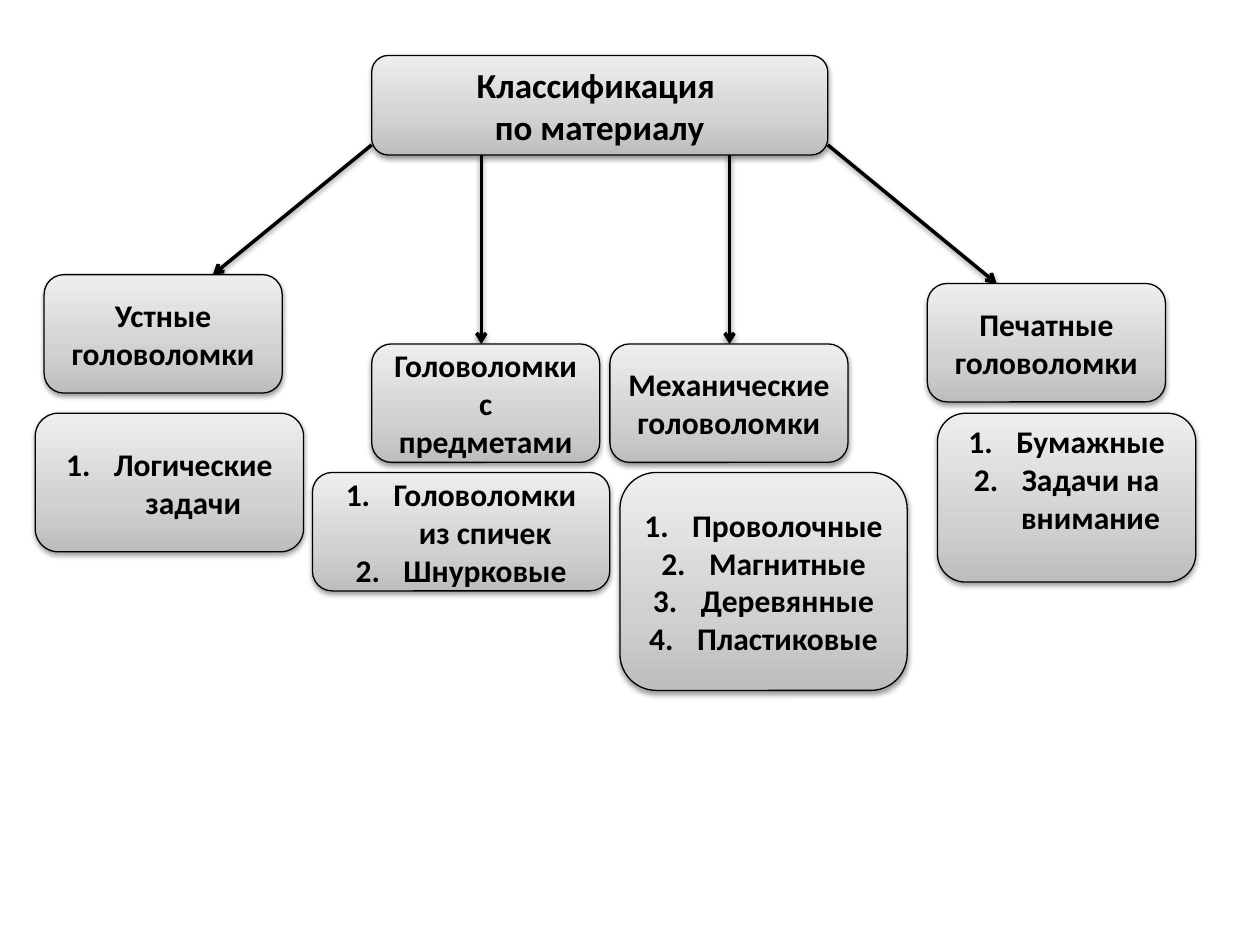
from collections import namedtuple
from lxml.etree import SubElement
from pptx import Presentation
from pptx.dml.color import RGBColor
from pptx.enum.shapes import MSO_CONNECTOR, MSO_SHAPE
from pptx.enum.text import MSO_ANCHOR, PP_ALIGN
from pptx.oxml.ns import qn
from pptx.util import Inches, Pt

COLORS = {"ink": "000000", "low": "BDBDBD", "mid": "D1D1D1", "high": "EEEEEE"}
FADE = [(0, "low"), (35, "mid"), (100, "high")]
FONT = "Calibri"

Box = namedtuple("Box", "left top width height")
Branch = namedtuple("Branch", "start tip head title list items pad")

ROOT = Box(2.95, 0.44, 3.62, 0.79)
TITLE = ["Классификация ", "по материалу"]
BRANCHES = [
    Branch((0, 0.71), 1.34, Box(0.35, 2.18, 1.89, 0.94), "Устные головоломки",
           Box(-0.07, 1.1, 2.13, 1.1), ["Логические задачи"], 0.05),
    Branch((0.87, 0.79), 0.87, Box(2.95, 2.73, 1.81, 0.94), "Головоломки с предметами",
           Box(-0.47, 1.02, 2.36, 0.94), ["Головоломки из спичек", "Шнурковые"], 0.05),
    Branch((2.84, 0.79), 0.95, Box(4.84, 2.73, 1.89, 0.94), "Механические головоломки",
           Box(0.08, 1.02, 2.28, 1.73),
           ["Проволочные", "Магнитные", "Деревянные", "Пластиковые"], 0.05),
    Branch((3.62, 0.71), 0.55, Box(7.36, 2.25, 1.89, 0.94), "Печатные головоломки",
           Box(0.08, 1.03, 2.05, 1.34), ["Бумажные", "Задачи на внимание"], 0.35),
]


def paint(parent, name, alpha=None):
    color = SubElement(parent, qn("a:srgbClr"), val=COLORS[name])
    if alpha:
        SubElement(color, qn("a:alpha"), val=str(alpha * 1000))


def stroke(shape, width):
    shape.line.color.rgb = RGBColor.from_string(COLORS["ink"])
    shape.line.width = Pt(width)


def shade(shape):
    props = shape._element.spPr
    effects = props.find(qn("a:effectLst"))
    if effects is None:
        effects = SubElement(props, qn("a:effectLst"))
    glow = SubElement(effects, qn("a:outerShdw"), blurRad=str(Pt(3.1)),
                      dist=str(Pt(1.6)), dir="5400000", rotWithShape="0")
    paint(glow, "ink", 38)


def fade(shape):
    shape.fill.gradient()
    shape.fill.gradient_angle = 90
    stops = shape._element.spPr.find(qn("a:gradFill")).find(qn("a:gsLst"))
    for stop in list(stops):
        stops.remove(stop)
    for place, name in FADE:
        paint(SubElement(stops, qn("a:gs"), pos=str(place * 1000)), name)


def number(para):
    props = para._p.get_or_add_pPr()
    props.set("marL", str(Inches(0.38)))
    props.set("indent", str(Inches(-0.38)))
    SubElement(props, qn("a:buFont"), typeface="+mj-lt")
    SubElement(props, qn("a:buAutoNum"), type="arabicPeriod")


def add_card(slide, box, lines, size=18, listed=False, pad=0.05):
    card = slide.shapes.add_shape(MSO_SHAPE.ROUNDED_RECTANGLE, *map(Inches, box))
    card.shadow.inherit = False
    fade(card)
    stroke(card, 0.75)
    shade(card)
    frame = card.text_frame
    frame.word_wrap = True
    frame.vertical_anchor = MSO_ANCHOR.MIDDLE
    frame.margin_bottom = Inches(pad)
    for index, line in enumerate(lines):
        para = frame.add_paragraph() if index else frame.paragraphs[0]
        para.alignment = PP_ALIGN.CENTER
        if listed:
            number(para)
        run = para.add_run()
        run.text = line
        run.font.name = FONT
        run.font.size = Pt(size)
        run.font.bold = True
        run.font.color.rgb = RGBColor.from_string(COLORS["ink"])


def add_arrow(slide, start, end):
    arrow = slide.shapes.add_connector(MSO_CONNECTOR.STRAIGHT, *map(Inches, start + end))
    stroke(arrow, 2)
    SubElement(arrow._element.spPr.find(qn("a:ln")), qn("a:tailEnd"), type="arrow")
    shade(arrow)


def add_branch(slide, root, branch):
    head, below = branch.head, branch.list
    start = (root.left + branch.start[0], root.top + branch.start[1])
    add_arrow(slide, start, (head.left + branch.tip, head.top))
    add_card(slide, head, [branch.title])
    place = below._replace(left=head.left + below.left, top=head.top + below.top)
    add_card(slide, place, branch.items, listed=True, pad=branch.pad)


def add_tree(slide, root):
    add_card(slide, root, TITLE, size=20)
    for branch in BRANCHES:
        add_branch(slide, root, branch)


def main():
    deck = Presentation()
    deck.slide_width, deck.slide_height = Inches(10), Inches(7.5)
    slide = deck.slides.add_slide(deck.slide_layouts[6])
    add_tree(slide, ROOT)
    deck.save("out.pptx")


if __name__ == "__main__":
    main()
